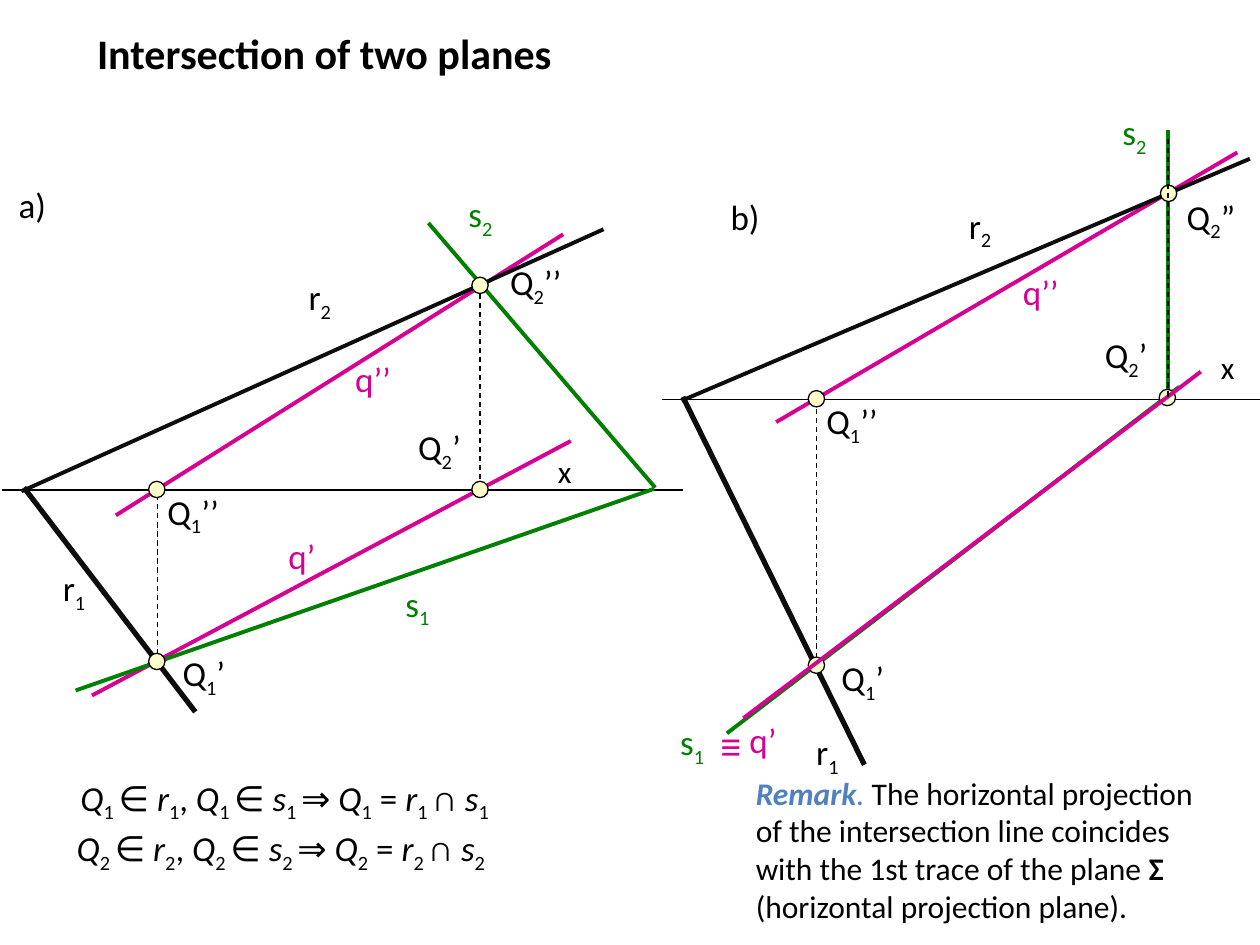
from itertools import groupby

from lxml import etree
from pptx import Presentation
from pptx import util as u
from pptx.dml.color import RGBColor
from pptx.enum import dml, shapes, text
from pptx.oxml.ns import qn

COLS, ROWS = 100, 75
CELL = u.Inches(10) // COLS
FONT = "Calibri"
COLORS = {
    "black": "000000", "trace": "0D0D0D", "green": "008000",
    "magenta": "D60093", "point": "FFFFCC", "remark": "4F81BD",
}
# style: colour, width in points, dashed
LINES = {
    "axis": ("black", 0.75, False),
    "recall": ("black", 0.75, True),
    "r2": ("trace", 2.25, False),
    "r1": ("trace", 3, False),
    "s": ("green", 2.25, False),
    "q": ("magenta", 2.25, False),
}
DOT = 1.3

# lines: style, x1, y1, x2, y2; labels: text, colour, left, top, width
# points: centre x, centre y, then label text, left, top, width
LINES_A = [
    ("q", 9.2, 40.9, 44.7, 18.6), ("q", 45.3, 35, 7.3, 55.2),
    ("axis", 0.2, 38.9, 54.2, 38.9),
    ("r2", 47.9, 18.2, 1.7, 39), ("r1", 1.9, 38.7, 15.5, 56.5),
    ("s", 34, 17.7, 52, 38.7), ("s", 51.9, 38.8, 6, 54.8),
    ("recall", 12.5, 51.9, 12.5, 38.6), ("recall", 38.1, 22.6, 38.1, 38.3),
]
LABELS_A = [
    ("a)", "black", 0.5, 14.1, 5.6), ("x", "black", 43.3, 35.4, 7.2),
    ("q’’", "magenta", 27.2, 27.9, 7.1), ("q’", "magenta", 21.9, 41.9, 6.9),
    ("r|1", "black", 4, 44.5, 5), ("r|2", "black", 23.5, 21.4, 6.1),
    ("s|1", "green", 31.2, 45.7, 5.7), ("s|2", "green", 36.2, 14.8, 8.6),
]
POINTS_A = [
    (12.45, 52.5, "Q|1|’", 13.5, 51.2, 6.8),
    (12.45, 38.85, "Q|1|’’", 12.3, 38.4, 8.2),
    (38.1, 38.85, "Q|2|’", 32.2, 33.3, 7.4),
    (38.1, 22.65, "Q|2|’’", 39.5, 20.2, 9),
]
LINES_B = [
    ("q", 61.6, 33.5, 98.2, 12.1), ("recall", 64.8, 52.2, 64.8, 31.5),
    ("s", 93.6, 30.7, 57.7, 58.2), ("axis", 52.5, 31.7, 100.5, 31.7),
    ("r2", 99.2, 12.6, 54.1, 31.8), ("r1", 54.2, 31.5, 68.6, 60.7),
    ("s", 92.7, 10.3, 92.7, 31.4),
]
LABELS_B = [
    ("b)", "black", 57, 15, 5.7), ("x", "black", 95.9, 27.1, 4.9),
    ("q’’", "magenta", 80.2, 21, 7.3), ("q’", "magenta", 58.5, 56.5, 6.6),
    ("≡", "magenta", 56.2, 56.6, 4),
    ("r|1", "black", 63.8, 57.5, 5), ("r|2", "black", 75.9, 15.7, 6.1),
    ("s|1", "green", 53, 56.7, 5.7), ("s|2", "green", 88.1, 8.3, 8.6),
]
POINTS_B = [
    (64.8, 52.8, "Q|1|’", 65.8, 51.6, 6.8),
    (64.8, 31.65, "Q|1|’’", 64.6, 31.2, 8.2),
    (92.65, 31.55, "Q|2|’", 86.7, 26, 7.4),
    (92.75, 15.35, "Q|2|”", 93.2, 15, 6.2),
]
OVERLAY_B = [("q", 95.3, 29.5, 59, 57), ("recall", 92.7, 11, 92.7, 31.7)]
SIZES = {"x": 18, "≡": 24}


def cells(*lengths):
    return [round(n * CELL) for n in lengths]


def rgb(name):
    return RGBColor.from_string(COLORS[name])


def style_font(font, size, color):
    font.name, font.size, font.color.rgb = FONT, u.Pt(size), rgb(color)


def add_line(slide, style, x1, y1, x2, y2):
    color, width, dashed = LINES[style]
    line = slide.shapes.add_connector(shapes.MSO_CONNECTOR.STRAIGHT,
                                      *cells(x1, y1, x2, y2))
    line.line.color.rgb = rgb(color)
    line.line.width = u.Pt(width)
    if dashed:
        line.line.dash_style = dml.MSO_LINE.DASH
    etree.SubElement(line._element.spPr, qn("a:effectLst"))


def add_box(slide, left, top, width, height, size, color="black"):
    """Add an empty text box and return its paragraph."""
    tf = slide.shapes.add_textbox(*cells(left, top, width, height)).text_frame
    tf.word_wrap = True
    tf.auto_size = text.MSO_AUTO_SIZE.SHAPE_TO_FIT_TEXT
    p = tf.paragraphs[0]
    style_font(p.font, size, color)
    return p


def add_symbols(p, markup, italic=False):
    """Every second part between bars is a subscript; italic slants letters only."""
    for i, part in enumerate(markup.split("|")):
        for is_letter, chars in groupby(part, str.isalpha):
            r = p.add_run()
            r.text = "".join(chars)
            if i % 2:
                r.font._element.set("baseline", "-25000")
            elif italic and is_letter:
                r.font.italic = True


def add_label(slide, markup, color, left, top, width):
    size = SIZES.get(markup, 20)
    p = add_box(slide, left, top, width, size * 0.215, size, color)
    add_symbols(p, markup)


def add_point(slide, x, y, markup, left, top, width):
    sp = slide.shapes.add_shape(shapes.MSO_SHAPE.OVAL,
                                *cells(x - DOT / 2, y - DOT / 2, DOT, DOT))
    sp.shadow.inherit = False
    sp.fill.solid()
    sp.fill.fore_color.rgb = rgb("point")
    sp.line.color.rgb = rgb("black")
    sp.line.width = u.Pt(0.75)
    add_label(slide, markup, "black", left, top, width)


def add_drawing(slide, lines, points, overlay, labels):
    for add, rows in ((add_line, lines), (add_point, points),
                      (add_line, overlay), (add_label, labels)):
        for row in rows:
            add(slide, *row)


def add_formula(slide, n, left, top, width):
    p = add_box(slide, left, top, width, 4.3, 20)
    add_symbols(p, f"Q|{n} |∈ r|{n}|, Q|{n} |∈ s|{n} |⇒ Q|{n}| = r|{n} |∩ s|{n}",
                italic=True)


def add_remark(slide):
    p = add_box(slide, 59, 60.9, 38.7, 13.1, 18)
    for words, color, bold, italic in (
            ("Remark", "remark", True, True),
            (". ", "remark", False, True),
            ("The horizontal projection of the intersection line coincides "
             "with the 1st trace of the plane ", "black", False, False),
            ("Σ", "black", True, False),
            (" (horizontal projection plane).", "black", False, False)):
        r = p.add_run()
        r.text = words
        r.font.bold, r.font.italic = bold, italic
        r.font.color.rgb = rgb(color)


def set_title(slide, words):
    title = slide.shapes.title
    title.left, title.top, title.width, title.height = cells(6.7, 1.7, 50, 6.7)
    tf = title.text_frame
    tf.text = words
    tf.vertical_anchor = text.MSO_ANCHOR.TOP
    tf.auto_size = text.MSO_AUTO_SIZE.NONE
    p = tf.paragraphs[0]
    p.alignment = text.PP_ALIGN.LEFT
    style_font(p.font, 24, "black")
    p.font.bold = True


def main():
    prs = Presentation()
    prs.slide_width, prs.slide_height = cells(COLS, ROWS)
    slide = prs.slides.add_slide(prs.slide_layouts[5])
    set_title(slide, "Intersection of two planes")
    add_drawing(slide, LINES_A, POINTS_A, [], LABELS_A)
    add_formula(slide, 1, 5.4, 61.1, 38.6)
    add_formula(slide, 2, 5.1, 65.1, 38)
    add_remark(slide)
    add_drawing(slide, LINES_B, POINTS_B, OVERLAY_B, LABELS_B)
    prs.save("out.pptx")


if __name__ == "__main__":
    main()
